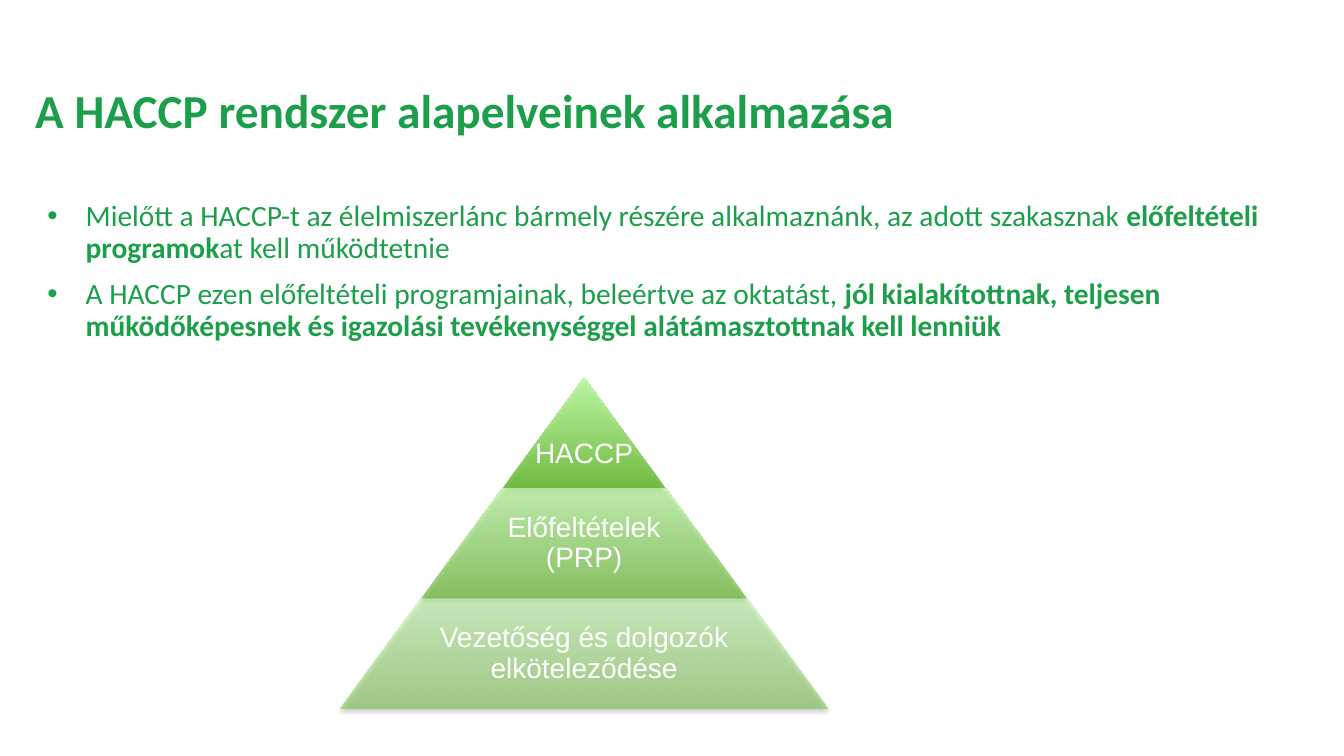
from dataclasses import dataclass

from lxml import etree
from pptx import Presentation
from pptx.dml.color import RGBColor
from pptx.enum.shapes import MSO_SHAPE
from pptx.enum.text import MSO_ANCHOR, PP_ALIGN
from pptx.oxml.ns import qn
from pptx.text.text import TextFrame, _Paragraph
from pptx.util import Inches, Length, Pt

TRAPEZOID = MSO_SHAPE.TRAPEZOID
TOP, MIDDLE = MSO_ANCHOR.TOP, MSO_ANCHOR.MIDDLE
CENTER = PP_ALIGN.CENTER

GREEN = RGBColor(0x1C, 0x9E, 0x4A)
DARK = RGBColor(0x6D, 0xBC, 0x38)
LIGHT = RGBColor(0xBB, 0xFC, 0xA0)
WHITE = RGBColor(0xFF, 0xFF, 0xFF)

WIDTH, HEIGHT = Inches(13.33), Inches(7.5)
COLS, ROWS = 160, 90

# Text area and pyramid, in grid columns and rows
LEFT, SPAN = 4.2, 151.7
AXIS, PEAK = 69.54, 45
STEP, RISE = 9.7, 13.14


@dataclass(frozen=True)
class Tier:
    label: str
    alpha: int
    share: float  # label width as a share of the base
    drop: float  # rows kept free above the label


TITLE = "A HACCP rendszer alapelveinek alkalmazása"
# Each bullet is a list of (text, bold) pieces
BULLETS = [
    [("Mielőtt a HACCP-t az élelmiszerlánc bármely részére alkalmaznánk, "
      "az adott szakasznak ", False),
     ("előfeltételi programok", True),
     ("at kell működtetnie", False)],
    [("A HACCP ezen előfeltételi programjainak, beleértve az oktatást, ", False),
     ("jól kialakítottnak, teljesen működőképesnek és igazolási "
      "tevékenységgel alátámasztottnak kell lenniük", True)],
]
TIERS = [
    Tier("HACCP", 90, 1, 5),
    Tier("Előfeltételek (PRP)", 70, 0.65, 0),
    Tier("Vezetőség és dolgozók elköteleződése", 50, 0.65, 0),
]


def col(count: float) -> Length:
    return Length(round(WIDTH * count / COLS))


def row(count: float) -> Length:
    return Length(round(HEIGHT * count / ROWS))


def add_box(slide, left: float, top: float, wide: float, high: float,
            anchor, inset: float = 0) -> TextFrame:
    box = slide.shapes.add_textbox(col(left), row(top), col(wide), row(high))
    frame = box.text_frame
    frame.word_wrap = True
    frame.vertical_anchor = anchor
    frame.margin_left = frame.margin_right = Inches(inset)
    frame.margin_top = frame.margin_bottom = Inches(inset)
    return frame


def style(para: _Paragraph, face: str, size: float, color: RGBColor) -> None:
    para.line_spacing = 0.9
    for run in para.runs:
        run.font.name = face
        run.font.size = Pt(size)
        run.font.color.rgb = color


def add_mark(para: _Paragraph) -> None:
    """Give the paragraph a hanging green bullet."""
    props = para._p.get_or_add_pPr()
    props.set("marL", str(Inches(0.5)))
    props.set("indent", str(Inches(-0.38)))
    tint = etree.SubElement(props, qn("a:buClr"))
    etree.SubElement(tint, qn("a:srgbClr"), val=str(GREEN))
    etree.SubElement(props, qn("a:buFont"), typeface="Arial")
    etree.SubElement(props, qn("a:buChar"), char="•")


def add_title(slide) -> None:
    frame = add_box(slide, LEFT, 4.8, SPAN, 17.4, MIDDLE)
    frame.text = TITLE
    para = frame.paragraphs[0]
    style(para, "Calibri", 33.8, GREEN)
    para.runs[0].font.bold = True


def add_list(slide) -> None:
    frame = add_box(slide, LEFT, 24, SPAN, 57, TOP)
    for index, pieces in enumerate(BULLETS):
        para = frame.add_paragraph() if index else frame.paragraphs[0]
        add_mark(para)
        for text, bold in pieces:
            run = para.add_run()
            run.text = text
            run.font.bold = bold
        style(para, "Calibri", 21, GREEN)
        if index:
            para.space_before = Pt(10)


def add_glow(shape, alpha: int) -> None:
    """Fill with a see-through green gradient and a soft shadow below."""
    fill = shape.fill
    fill.gradient()
    fill.gradient_angle = 90
    for stop, color in zip(fill.gradient_stops, (DARK, LIGHT)):
        stop.color.rgb = color
    props = shape._element.spPr
    for tint in props.iter(qn("a:srgbClr")):
        etree.SubElement(tint, qn("a:alpha"), val=str(alpha * 1000))
    shape.line.fill.background()
    shape.shadow.inherit = False
    shade = etree.SubElement(
        props.find(qn("a:effectLst")), qn("a:outerShdw"),
        blurRad=str(Pt(3.1)), dist=str(Pt(1.8)), dir="5400000", rotWithShape="0")
    black = etree.SubElement(shade, qn("a:srgbClr"), val="000000")
    etree.SubElement(black, qn("a:alpha"), val="35000")


def add_tier(slide, index: int, tier: Tier) -> None:
    half = STEP * (index + 1)
    top = PEAK + RISE * index
    shape = slide.shapes.add_shape(
        TRAPEZOID, col(AXIS - half), row(top), col(2 * half), row(RISE))
    shape.adjustments[0] = STEP / RISE
    add_glow(shape, tier.alpha)

    wide = 2 * half * tier.share
    frame = add_box(slide, AXIS - wide / 2, top + tier.drop, wide,
                    RISE - tier.drop, MIDDLE, 0.03)
    frame.text = tier.label
    para = frame.paragraphs[0]
    para.alignment = CENTER
    style(para, "Arial", 20, WHITE)


def main() -> None:
    deck = Presentation()
    deck.slide_width, deck.slide_height = WIDTH, HEIGHT
    slide = deck.slides.add_slide(deck.slide_layouts[6])
    add_title(slide)
    add_list(slide)
    for index, tier in enumerate(TIERS):
        add_tier(slide, index, tier)
    deck.save("out.pptx")


if __name__ == "__main__":
    main()
